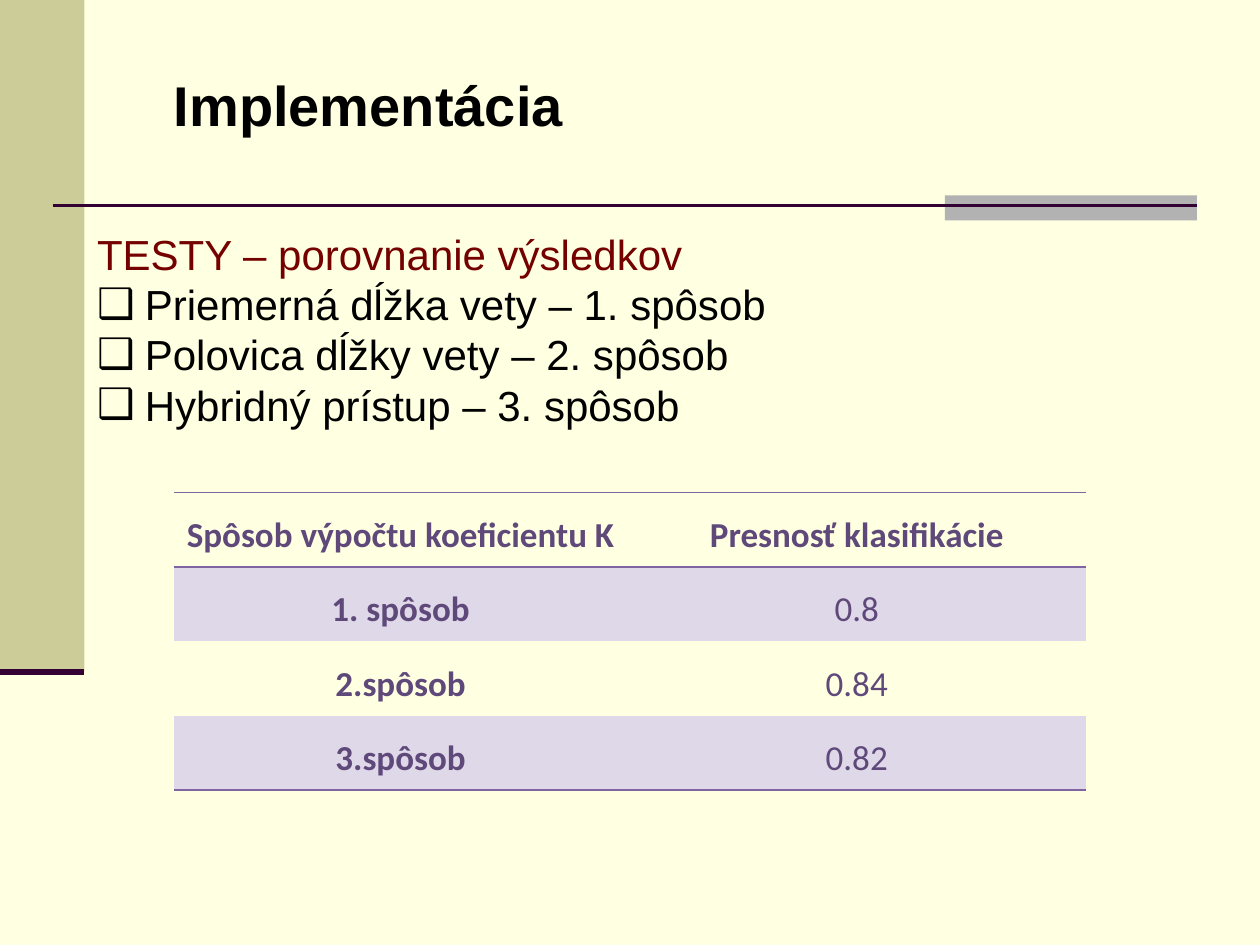
"""Build the slide comparing the accuracy of three ways to compute coefficient K."""
import pptx
import pptx.dml.color
import pptx.enum.shapes
import pptx.enum.text
import pptx.oxml
import pptx.oxml.ns
import pptx.util
from lxml import etree

RGBColor = pptx.dml.color.RGBColor
Inches = pptx.util.Inches
Pt = pptx.util.Pt
qualified = pptx.oxml.ns.qn
ALIGN = pptx.enum.text.PP_ALIGN

CREAM = RGBColor(0xFF, 0xFF, 0xE1)
OLIVE = RGBColor(0xCC, 0xCC, 0x99)
GREY = RGBColor(0xB2, 0xB2, 0xB2)
PLUM = RGBColor(0x33, 0x00, 0x33)
BLACK = RGBColor(0x00, 0x00, 0x00)
MAROON = RGBColor(0x74, 0x00, 0x00)
VIOLET = RGBColor(0x5F, 0x49, 0x7A)
LAVENDER = RGBColor(0xDF, 0xD8, 0xE8)
BORDER = RGBColor(0x80, 0x64, 0xA2)

WIDTH, HEIGHT = 10, 7.5
SIDEBAR_WIDTH, SIDEBAR_HEIGHT = 0.67, 5.33
RULE_TOP, RULE_RIGHT = 1.63, WIDTH * 0.95
INDENT = 0.38
LEADING = 1.2

TITLE = "Implementácia"
HEADING = "TESTY – porovnanie výsledkov"
METHODS = [
    "Priemerná dĺžka vety – 1. spôsob",
    "Polovica dĺžky vety – 2. spôsob",
    "Hybridný prístup – 3. spôsob",
]
RESULTS = [
    ("Spôsob výpočtu koeficientu K", "Presnosť klasifikácie"),
    ("1. spôsob", "0.8"),
    ("2.spôsob", "0.84"),
    ("3.spôsob", "0.82"),
]
COLUMN_WIDTHS = (3.6, 3.64)
ROW_HEIGHT = 0.59
NO_STYLE = "{2D5ABB26-0587-4C30-8999-92F81FD0307C}"

BARS = [
    (0, 0, SIDEBAR_WIDTH, SIDEBAR_HEIGHT, OLIVE),
    (WIDTH * 0.75, 1.55, WIDTH * 0.2, 0.2, GREY),
]
RULES = [
    (0.42, RULE_RIGHT, RULE_TOP, 1.5),
    (0, SIDEBAR_WIDTH, SIDEBAR_HEIGHT, 3.5),
]


def write(paragraph, text, size, color, font="Arial", bold=False,
          align=ALIGN.LEFT, spacing=1.0, before=0):
    """Put formatted text into a paragraph."""
    paragraph.alignment = align
    paragraph.line_spacing = spacing
    paragraph.space_before = Pt(before)
    run = paragraph.add_run()
    run.text = text
    run.font.name = font
    run.font.size = Pt(size)
    run.font.bold = bold
    run.font.color.rgb = color


def place(placeholder, left, top, width, height, wrap):
    """Move a placeholder and return its emptied text frame."""
    placeholder.left, placeholder.top = Inches(left), Inches(top)
    placeholder.width, placeholder.height = Inches(width), Inches(height)
    frame = placeholder.text_frame
    frame.word_wrap = wrap
    frame.auto_size = pptx.enum.text.MSO_AUTO_SIZE.NONE
    frame.vertical_anchor = pptx.enum.text.MSO_ANCHOR.TOP
    return frame


def set_bullet(paragraph, character=None):
    """Give a paragraph a hanging indent and a bullet, or no bullet."""
    properties = paragraph._p.get_or_add_pPr()
    properties.set("marL", str(Inches(INDENT)))
    properties.set("indent", str(-Inches(INDENT)))
    if character:
        etree.SubElement(properties, qualified("a:buFont")).set("typeface", "Arial")
        etree.SubElement(properties, qualified("a:buChar")).set("char", character)
    else:
        etree.SubElement(properties, qualified("a:buNone"))


def set_border(cell, ruled_sides):
    """Draw the named sides of a cell and hide the others."""
    properties = cell._tc.get_or_add_tcPr()
    for side in ("lnL", "lnR", "lnT", "lnB"):
        line = etree.SubElement(properties, qualified(f"a:{side}"))
        if side in ruled_sides:
            line.set("w", str(Pt(1)))
            fill = etree.SubElement(line, qualified("a:solidFill"))
            etree.SubElement(fill, qualified("a:srgbClr")).set("val", str(BORDER))
        else:
            etree.SubElement(line, qualified("a:noFill"))


def add_decoration(slide):
    """Add the sidebar, the accent bar and the two rules."""
    for left, top, width, height, color in BARS:
        bar = slide.shapes.add_shape(
            pptx.enum.shapes.MSO_SHAPE.RECTANGLE,
            Inches(left), Inches(top), Inches(width), Inches(height))
        bar.shadow.inherit = False
        bar.fill.solid()
        bar.fill.fore_color.rgb = color
        bar.line.fill.background()
    for left, right, top, weight in RULES:
        rule = slide.shapes.add_connector(
            pptx.enum.shapes.MSO_CONNECTOR.STRAIGHT,
            Inches(left), Inches(top), Inches(right), Inches(top))
        rule.line.color.rgb = PLUM
        rule.line.width = Pt(weight)
        etree.SubElement(rule._element.spPr, qualified("a:effectLst"))


def add_results(slide):
    """Add the table of accuracies."""
    last = len(RESULTS) - 1
    table = slide.shapes.add_table(
        len(RESULTS), len(COLUMN_WIDTHS), Inches(1.38), Inches(3.91),
        Inches(sum(COLUMN_WIDTHS)), Inches(ROW_HEIGHT * len(RESULTS))).table
    table.horz_banding = False
    table._tbl.tblPr.find(qualified("a:tableStyleId")).text = NO_STYLE
    for column, width in zip(table.columns, COLUMN_WIDTHS):
        column.width = Inches(width)
    for row_index, values in enumerate(RESULTS):
        table.rows[row_index].height = Inches(ROW_HEIGHT)
        sides = (["lnT"] if row_index < 2 else []) + (["lnB"] if row_index in (0, last) else [])
        for column_index, value in enumerate(values):
            cell = table.cell(row_index, column_index)
            cell.margin_left = cell.margin_right = Inches(0.08)
            cell.margin_top = cell.margin_bottom = 0
            set_border(cell, sides)
            if row_index % 2:
                cell.fill.solid()
                cell.fill.fore_color.rgb = LAVENDER
            else:
                cell.fill.background()
            write(cell.text_frame.paragraphs[0], value, 20, VIOLET, font="Calibri",
                  bold=row_index == 0 or column_index == 0,
                  align=ALIGN.CENTER, spacing=1.5, before=3)


def main():
    """Create and save the presentation."""
    presentation = pptx.Presentation()
    presentation.slide_width, presentation.slide_height = Inches(WIDTH), Inches(HEIGHT)
    slide = presentation.slides.add_slide(presentation.slide_layouts[1])
    slide.background.fill.solid()
    slide.background.fill.fore_color.rgb = CREAM
    add_decoration(slide)

    title = place(slide.shapes.title, 1.28, 0.51, 3.56, 0.64, wrap=False)
    write(title.paragraphs[0], TITLE, 32, BLACK, bold=True, spacing=Pt(32 * LEADING))

    body = place(slide.placeholders[1], SIDEBAR_WIDTH, 1.76, 8.74, 2.12, wrap=True)
    write(body.paragraphs[0], HEADING, 24, MAROON, spacing=Pt(24 * LEADING))
    set_bullet(body.paragraphs[0])
    for method in METHODS:
        paragraph = body.add_paragraph()
        write(paragraph, method, 24, BLACK, spacing=Pt(24 * LEADING))
        set_bullet(paragraph, "❑")

    add_results(slide)
    presentation.save("out.pptx")


if __name__ == "__main__":
    main()
